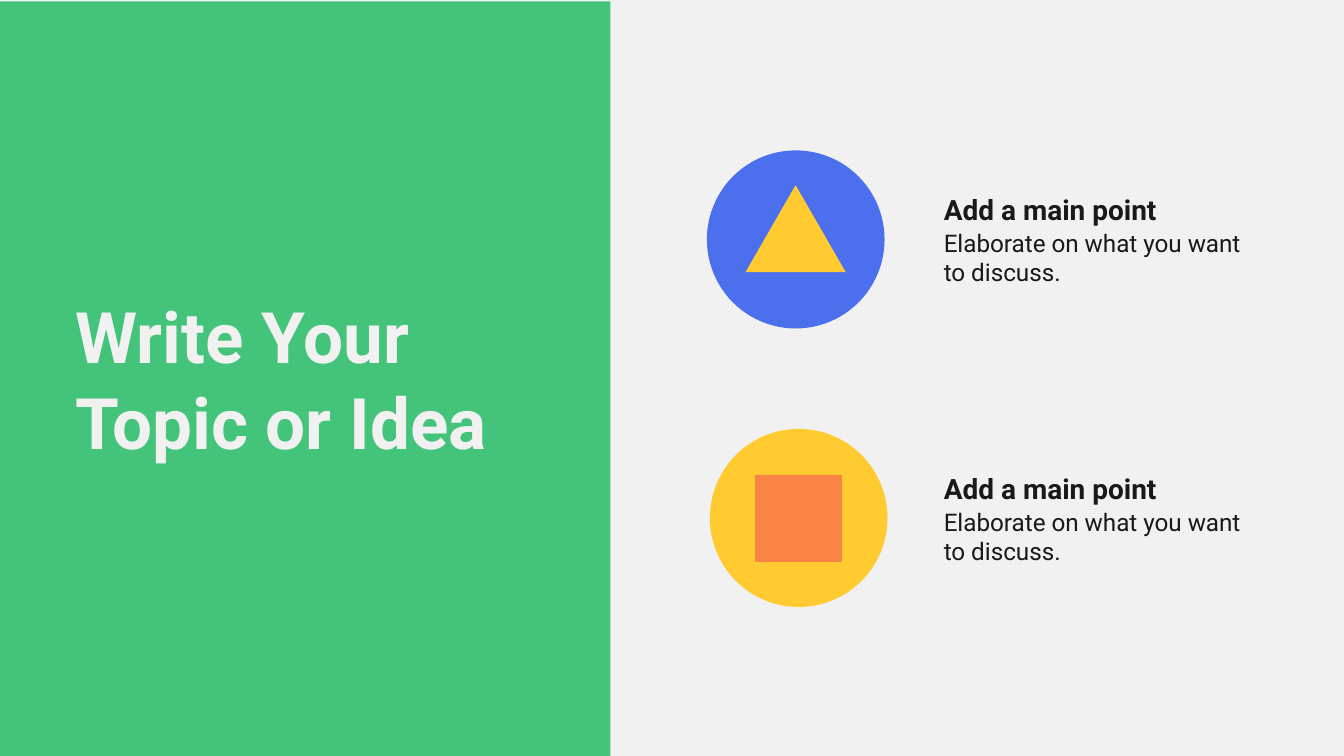
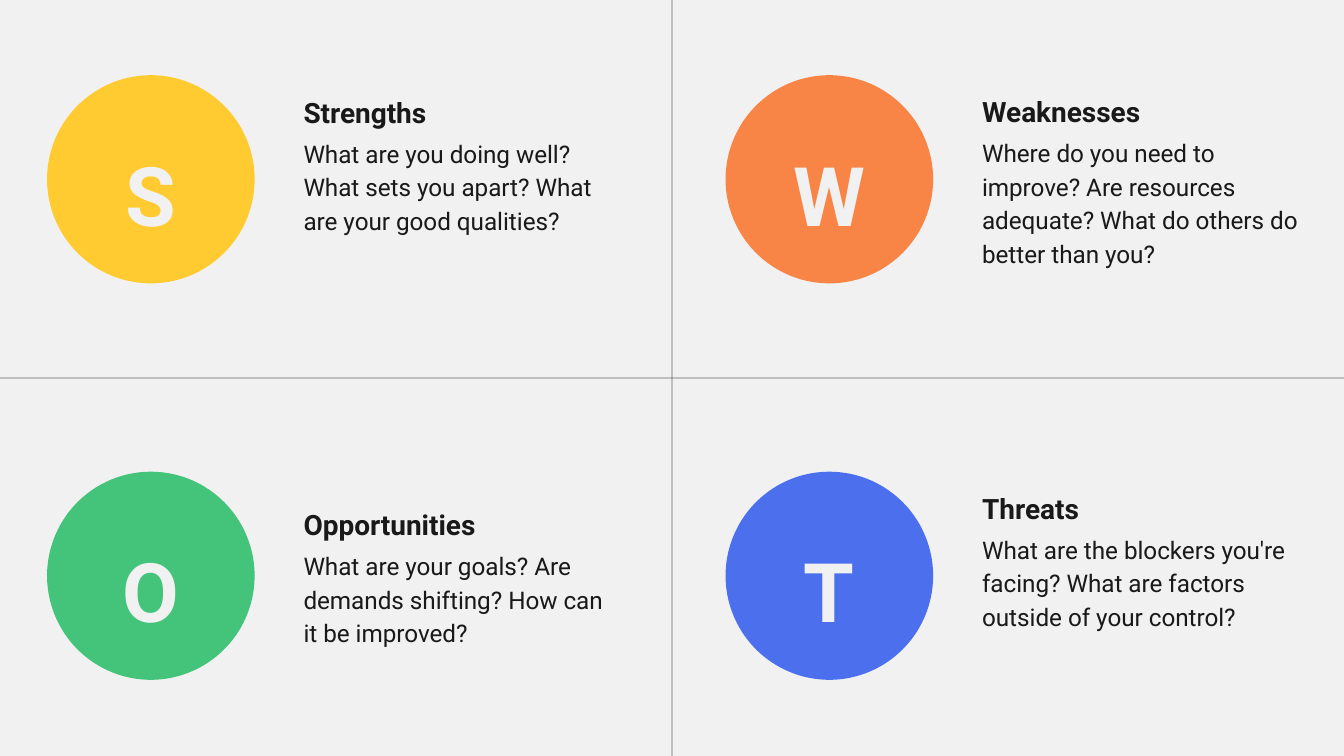
"""Build a topic slide and a SWOT slide in one flat, colourful style."""
from lxml import etree
from pptx import Presentation
from pptx.dml.color import RGBColor
from pptx.enum.shapes import MSO_CONNECTOR, MSO_SHAPE
from pptx.enum.text import PP_ALIGN
from pptx.oxml.ns import qn
from pptx.util import Pt

OVAL, RECT, TRIANGLE = MSO_SHAPE.OVAL, MSO_SHAPE.RECTANGLE, MSO_SHAPE.ISOSCELES_TRIANGLE
LEFT, CENTER = PP_ALIGN.LEFT, PP_ALIGN.CENTER
STRAIGHT = MSO_CONNECTOR.STRAIGHT
FONT = "Roboto"
W, H = 720, 405
COLORS = {
    "light": "F1F1F1",
    "ink": "191919",
    "green": "43C47A",
    "yellow": "FFCB30",
    "orange": "F88545",
    "blue": "4B6FED",
}
RGB = {name: RGBColor.from_string(value) for name, value in COLORS.items()}


def add_block(s, kind, x, y, w, h, color):
    sp = s.shapes.add_shape(kind, Pt(x), Pt(y), Pt(w), Pt(h))
    sp.shadow.inherit = False
    sp.fill.solid()
    sp.fill.fore_color.rgb = RGB[color]
    sp.line.fill.background()


def add_text(s, text, x, y, w, h, size, color="ink", bold=False, spacing=1.0, align=LEFT):
    tf = s.shapes.add_textbox(Pt(x), Pt(y), Pt(w), Pt(h)).text_frame
    tf.margin_left = tf.margin_right = tf.margin_top = tf.margin_bottom = 0
    tf.word_wrap = True
    p = tf.paragraphs[0]
    p.text = text
    p.alignment = align
    p.line_spacing = spacing
    p.font.name = FONT
    p.font.size = Pt(size)
    p.font.bold = bold
    p.font.color.rgb = RGB[color]


prs = Presentation()
prs.slide_width, prs.slide_height = Pt(W), Pt(H)
background = prs.slide_master.background.fill
background.solid()
background.fore_color.rgb = RGB["light"]
blank = prs.slide_layouts[6]

s = prs.slides.add_slide(blank)
add_block(s, RECT, 0, 0.7, 327, H - 0.7, "green")
add_text(s, "Write Your Topic or Idea", 40.5, 157, 245, 92, 38, "light", True)

points = [
    (378.7, "blue", TRIANGLE, 399.4, 18.6, 53.7, "yellow"),
    (380.3, "yellow", RECT, 404.5, 24.7, 46.6, "orange"),
]
for i, (x, disc, icon, icon_x, icon_dy, icon_w, icon_color) in enumerate(points):
    y = 80.6 + 149.2 * i
    add_block(s, OVAL, x, y, 95.2, 95.4, disc)
    add_block(s, icon, icon_x, y + icon_dy, icon_w, 46.6, icon_color)
    add_text(s, "Add a main point", 505.6, y + 17.2, 173.5, 18, 15, bold=True, spacing=1.3)
    add_text(s, "Elaborate on what you want to discuss.", 505.6, y + 41.8, 173.5, 31.7, 13)

s = prs.slides.add_slide(blank)
swot = [
    ("S", "Strengths", "yellow", 48.4,
     "What are you doing well? What sets you apart? What are your good qualities?"),
    ("W", "Weaknesses", "orange", 48.2,
     "Where do you need to improve? Are resources adequate? What do others do better than you?"),
    ("O", "Opportunities", "green", 269.4,
     "What are your goals? Are demands shifting? How can it be improved?"),
    ("T", "Threats", "blue", 260.5,
     "What are the blockers you're facing? What are factors outside of your control?"),
]
for i, (letter, heading, color, heading_y, questions) in enumerate(swot):
    row, col = divmod(i, 2)
    x, y = 25.2 + 363.5 * col, 40.3 + 212.4 * row
    add_block(s, OVAL, x, y, 111.2, 111.5, color)
    add_text(s, letter, x + 18, y + 31.7, 75, 53.3, 44, "light", True, 1.1, CENTER)
    add_text(s, heading, x + 137.4, heading_y, 169.2, 18, 15, bold=True, spacing=1.15)
    add_text(s, questions, x + 137.4, heading_y + 23.7, 169.2, 70, 13, spacing=1.15)

for x1, y1, x2, y2 in [(0, H / 2, W, H / 2), (W / 2, H, W / 2, 0)]:
    line = s.shapes.add_connector(STRAIGHT, Pt(x1), Pt(y1), Pt(x2), Pt(y2))
    line.line.width = Pt(0.75)
    line.line.color.rgb = RGB["ink"]
    sp_pr = line._element.spPr
    etree.SubElement(sp_pr.find(".//" + qn("a:srgbClr")), qn("a:alpha"), val="35000")
    etree.SubElement(sp_pr, qn("a:effectLst"))

prs.save("out.pptx")
